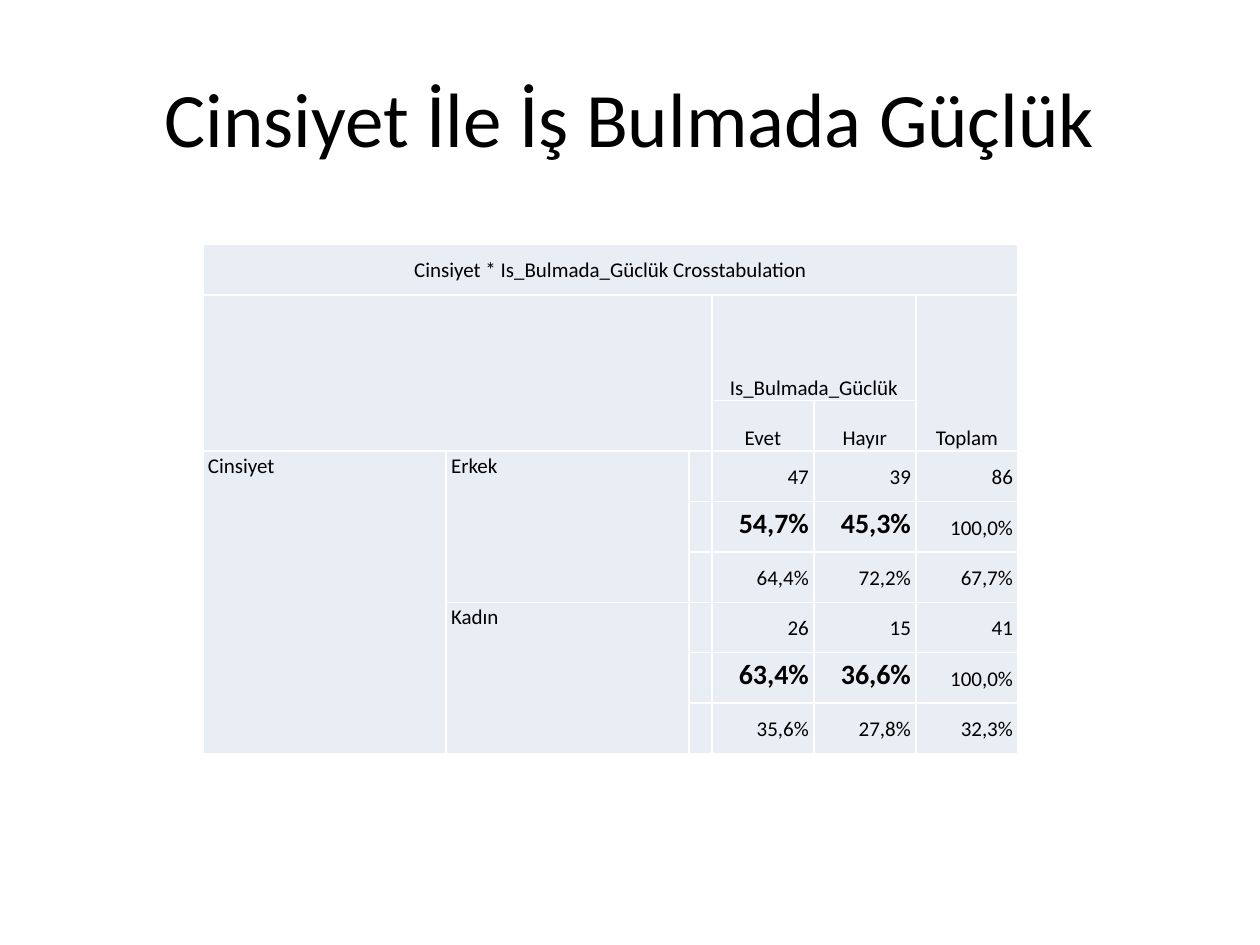
from lxml.etree import SubElement
from pptx import Presentation
from pptx.dml.color import RGBColor
from pptx.enum.text import MSO_ANCHOR as Anchor, PP_ALIGN as Align
from pptx.oxml.ns import qn
from pptx.util import Inches, Pt

BLACK = RGBColor(0x00, 0x00, 0x00)
WHITE = RGBColor(0xFF, 0xFF, 0xFF)
PALE_BLUE = RGBColor(0xE9, 0xED, 0xF4)

COLUMN_WIDTHS = [1.93, 1.93, 0.18, 0.81, 0.81, 0.81]
ROW_HEIGHTS = [0.4, 0.84] + [0.4] * 7
MERGES = [
    (0, 0, 0, 5), (1, 0, 2, 2), (1, 3, 1, 4), (1, 5, 2, 5),
    (3, 0, 8, 0), (3, 1, 5, 1), (6, 1, 8, 1),
]
HEADINGS = [
    (1, 3, "Is_Bulmada_Güclük"), (1, 5, "Toplam"), (2, 3, "Evet"), (2, 4, "Hayır"),
]
CATEGORIES = [(3, 0, "Cinsiyet"), (3, 1, "Erkek"), (6, 1, "Kadın")]
FIRST_VALUE_ROW, FIRST_VALUE_COLUMN = 3, 3
VALUES = [
    ("47", "39", "86"),
    ("54,7%", "45,3%", "100,0%"),
    ("64,4%", "72,2%", "67,7%"),
    ("26", "15", "41"),
    ("63,4%", "36,6%", "100,0%"),
    ("35,6%", "27,8%", "32,3%"),
]
EMPHASIZED = {"54,7%", "45,3%", "63,4%", "36,6%"}


def write(frame, text, size=12, bold=False, align=Align.LEFT, font="Calibri", color=BLACK):
    para = frame.paragraphs[0]
    para.alignment = align
    span = para.add_run()
    span.text = text
    span.font.name = font
    span.font.size = Pt(size)
    span.font.bold = bold
    span.font.color.rgb = color
    return para


class SlideBuilder:
    """Adds consistently styled elements to one slide."""

    def __init__(self, page, fill=PALE_BLUE, border=WHITE):
        self.page = page
        self.fill = fill
        self.border = border

    def title(self, text, left, top, width, height):
        box = self.page.shapes.add_textbox(
            Inches(left), Inches(top), Inches(width), Inches(height))
        frame = box.text_frame
        frame.word_wrap = True
        frame.vertical_anchor = Anchor.MIDDLE
        write(frame, text, size=44, align=Align.CENTER)

    def table(self, left, top, widths, heights, merges):
        table = self.page.shapes.add_table(
            len(heights), len(widths), Inches(left), Inches(top),
            Inches(sum(widths)), Inches(sum(heights))).table
        table.first_row = table.horz_banding = False
        for column, width in zip(table.columns, widths):
            column.width = Inches(width)
        for row, height in zip(table.rows, heights):
            row.height = Inches(height)
        for cell in table.iter_cells():
            self.style_cell(cell)
        for first_row, first_column, last_row, last_column in merges:
            table.cell(first_row, first_column).merge(table.cell(last_row, last_column))
        return table

    def style_cell(self, cell):
        cell.margin_left = cell.margin_right = cell.margin_top = cell.margin_bottom = 0
        properties = cell._tc.get_or_add_tcPr()
        for side in ("a:lnL", "a:lnR", "a:lnT", "a:lnB"):
            line = SubElement(properties, qn(side), w=str(Pt(1)))
            solid = SubElement(line, qn("a:solidFill"))
            SubElement(solid, qn("a:srgbClr"), val=str(self.border))
        cell.fill.solid()
        cell.fill.fore_color.rgb = self.fill

    def cell_text(self, cell, text, anchor=Anchor.MIDDLE, **text_format):
        cell.vertical_anchor = anchor
        para = write(cell.text_frame, text, **text_format)
        para.line_spacing = Pt(16)
        for side in ("marL", "marR"):
            para._p.get_or_add_pPr().set(side, str(Inches(0.04)))


def main():
    deck = Presentation()
    deck.slide_width, deck.slide_height = Inches(10), Inches(7.5)
    builder = SlideBuilder(deck.slides.add_slide(deck.slide_layouts[6]))

    builder.title("Cinsiyet İle İş Bulmada Güçlük", 0.5, 0.3, 9, 1.25)
    table = builder.table(1.61, 1.94, COLUMN_WIDTHS, ROW_HEIGHTS, MERGES)

    builder.cell_text(table.cell(0, 0), "Cinsiyet * Is_Bulmada_Güclük Crosstabulation",
                      align=Align.CENTER)
    for row, column, text in HEADINGS:
        builder.cell_text(table.cell(row, column), text, Anchor.BOTTOM, align=Align.CENTER)
    for row, column, text in CATEGORIES:
        builder.cell_text(table.cell(row, column), text, Anchor.TOP)
    for row, values in enumerate(VALUES, FIRST_VALUE_ROW):
        for column, text in enumerate(values, FIRST_VALUE_COLUMN):
            strong = text in EMPHASIZED
            builder.cell_text(table.cell(row, column), text, align=Align.RIGHT,
                              size=16 if strong else 12, bold=strong)

    deck.save("out.pptx")


if __name__ == "__main__":
    main()
